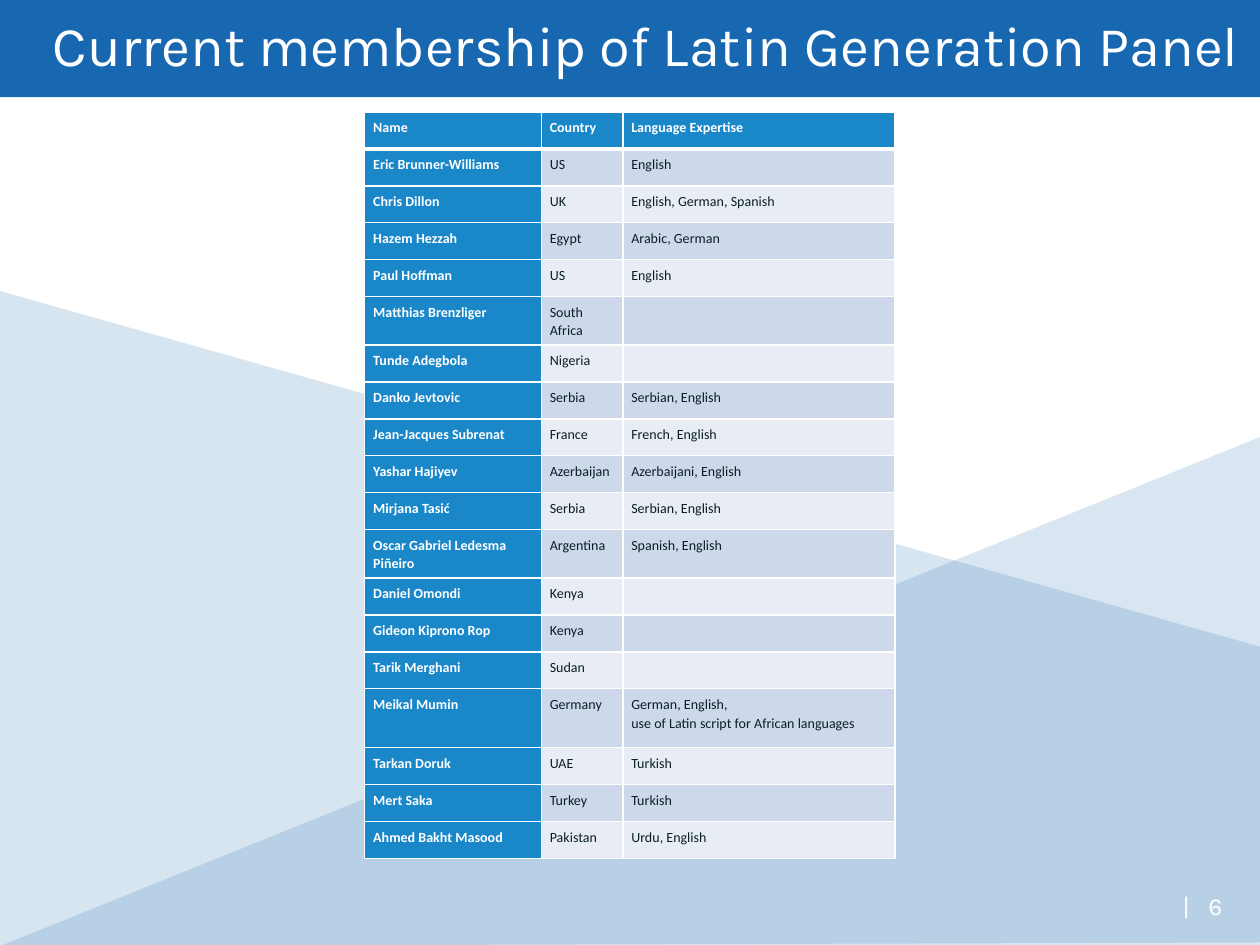
from typing import NamedTuple

from lxml.etree import SubElement
from pptx import Presentation
from pptx.dml.color import RGBColor
from pptx.enum.text import MSO_ANCHOR, MSO_AUTO_SIZE, PP_ALIGN
from pptx.oxml.ns import qn
from pptx.util import Pt

WHITE = RGBColor(0xFF, 0xFF, 0xFF)
NAVY = RGBColor(0x17, 0x68, 0xB1)
BLUE = RGBColor(0x1A, 0x87, 0xC9)
INK = RGBColor(0x0A, 0x1F, 0x24)
BAND_DARK = RGBColor(0xCD, 0xD9, 0xEB)
BAND_LIGHT = RGBColor(0xE8, 0xED, 0xF5)

SLIDE_W, SLIDE_H = 720, 540
COLUMN_WIDTHS = (100.9, 46.6, 155.5)
ROW_H, TWO_LINE_ROW_H = 21.1, 33.7
CELL_FONT_SIZE = 8


class Member(NamedTuple):
    name: str
    country: str
    languages: str = ""


class Backdrop(NamedTuple):
    points: tuple[tuple[float, float], ...]
    opacity: int  # percent


HEADER = Member("Name", "Country", "Language Expertise")
MEMBERS = [
    Member("Eric Brunner-Williams", "US", "English"),
    Member("Chris Dillon", "UK", "English, German, Spanish"),
    Member("Hazem Hezzah", "Egypt", "Arabic, German"),
    Member("Paul Hoffman", "US", "English"),
    Member("Matthias Brenzliger", "South Africa"),
    Member("Tunde Adegbola", "Nigeria"),
    Member("Danko Jevtovic", "Serbia", "Serbian, English"),
    Member("Jean-Jacques Subrenat", "France", "French, English"),
    Member("Yashar Hajiyev", "Azerbaijan", "Azerbaijani, English"),
    Member("Mirjana Tasić", "Serbia", "Serbian, English"),
    Member("Oscar Gabriel Ledesma Piñeiro", "Argentina", "Spanish, English"),
    Member("Daniel Omondi", "Kenya"),
    Member("Gideon Kiprono Rop", "Kenya"),
    Member("Tarik Merghani", "Sudan"),
    Member("Meikal Mumin", "Germany",
           "German, English,\vuse of Latin script for African languages"),
    Member("Tarkan Doruk", "UAE", "Turkish"),
    Member("Mert Saka", "Turkey", "Turkish"),
    Member("Ahmed Bakht Masood", "Pakistan", "Urdu, English"),
]
BACKDROPS = [
    Backdrop(((0, 166.3), (724.3, 370.8), (724.3, 538.6), (0, 540.7)), 17),
    Backdrop(((720, 249.8), (720, 540.7), (0, 540.7)), 16),
]


def format_font(font, name: str, size: float, color: RGBColor, bold: bool = False) -> None:
    font.name, font.size, font.bold = name, Pt(size), bold
    font.color.rgb = color


def add_backdrop(s, backdrop: Backdrop) -> None:
    start, *rest = [(Pt(x), Pt(y)) for x, y in backdrop.points]
    builder = s.shapes.build_freeform(*start)
    builder.add_line_segments(rest, close=True)
    sp = builder.convert_to_shape()
    sp.shadow.inherit = False
    sp.line.fill.background()
    sp.fill.solid()
    sp.fill.fore_color.rgb = NAVY
    color = sp.fill._xPr.find(qn("a:solidFill"))[0]
    SubElement(color, qn("a:alpha"), val=str(backdrop.opacity * 1000))


def format_title(s) -> None:
    sp = s.shapes.title
    sp.left, sp.top, sp.width, sp.height = Pt(0), Pt(-0.7), Pt(SLIDE_W), Pt(56.2)
    sp.fill.solid()
    sp.fill.fore_color.rgb = NAVY
    tf = sp.text_frame
    tf.text = "Current membership of Latin Generation Panel"
    tf.auto_size = MSO_AUTO_SIZE.NONE
    tf.vertical_anchor = MSO_ANCHOR.TOP
    tf.margin_left, tf.margin_top = Pt(30.2), Pt(5.5)
    p = tf.paragraphs[0]
    p.alignment = PP_ALIGN.LEFT
    p.line_spacing = Pt(39.8)
    format_font(p.runs[0].font, "Karla", 32, WHITE)


def add_page_number(s, number: int) -> None:
    sp = s.shapes.add_textbox(Pt(537.8), Pt(505.4), Pt(167.8), Pt(28.8))
    tf = sp.text_frame
    tf.word_wrap = True
    p = tf.paragraphs[0]
    p.alignment = PP_ALIGN.RIGHT
    for text in ("|", " ", str(number)):
        r = p.add_run()
        r.text = text
        format_font(r.font, "Karla", 14, WHITE)
    p.runs[1].font._element.set("spc", "720")  # widens the gap after the bar


def set_borders(cell, top: float, bottom: float) -> None:
    """Draw white borders; must run before the cell is filled."""
    tc_pr = cell._tc.get_or_add_tcPr()
    for tag, width in (("lnL", 1), ("lnR", 1), ("lnT", top), ("lnB", bottom)):
        ln = SubElement(tc_pr, qn(f"a:{tag}"), w=str(Pt(width)))
        fill = SubElement(ln, qn("a:solidFill"))
        SubElement(fill, qn("a:srgbClr"), val=str(WHITE))


def format_cell(cell, text: str, fill: RGBColor, color: RGBColor, bold: bool) -> None:
    cell.margin_left = cell.margin_right = Pt(4.9)
    cell.margin_top = cell.margin_bottom = Pt(3.6)
    cell.fill.solid()
    cell.fill.fore_color.rgb = fill
    cell.text = text
    p = cell.text_frame.paragraphs[0]
    p.line_spacing = 1.07
    for r in p.runs:
        format_font(r.font, "Calibri", CELL_FONT_SIZE, color, bold)
    if not text:  # keeps an empty cell as low as its row
        SubElement(p._p, qn("a:endParaRPr"), sz=str(CELL_FONT_SIZE * 100))


def add_member_table(s) -> None:
    rows = [HEADER, *MEMBERS]
    heights = [TWO_LINE_ROW_H if "\v" in m.languages else ROW_H for m in rows]
    table = s.shapes.add_table(len(rows), len(COLUMN_WIDTHS), Pt(208.4), Pt(64),
                               Pt(sum(COLUMN_WIDTHS)), Pt(sum(heights))).table
    for column, width in zip(table.columns, COLUMN_WIDTHS):
        column.width = Pt(width)
    for i, (member, height) in enumerate(zip(rows, heights)):
        table.rows[i].height = Pt(height)
        band = BAND_DARK if i % 2 else BAND_LIGHT
        for j, text in enumerate(member):
            cell = table.cell(i, j)
            strong = i == 0 or j == 0
            set_borders(cell, top=3 if i == 1 else 1, bottom=3 if i == 0 else 1)
            format_cell(cell, text, BLUE if strong else band,
                        WHITE if strong else INK, strong)


def main() -> None:
    prs = Presentation()
    prs.slide_width, prs.slide_height = Pt(SLIDE_W), Pt(SLIDE_H)
    s = prs.slides.add_slide(prs.slide_layouts.get_by_name("Title Only"))
    for backdrop in BACKDROPS:
        add_backdrop(s, backdrop)
    add_page_number(s, 6)
    format_title(s)
    add_member_table(s)
    prs.save("out.pptx")


if __name__ == "__main__":
    main()
